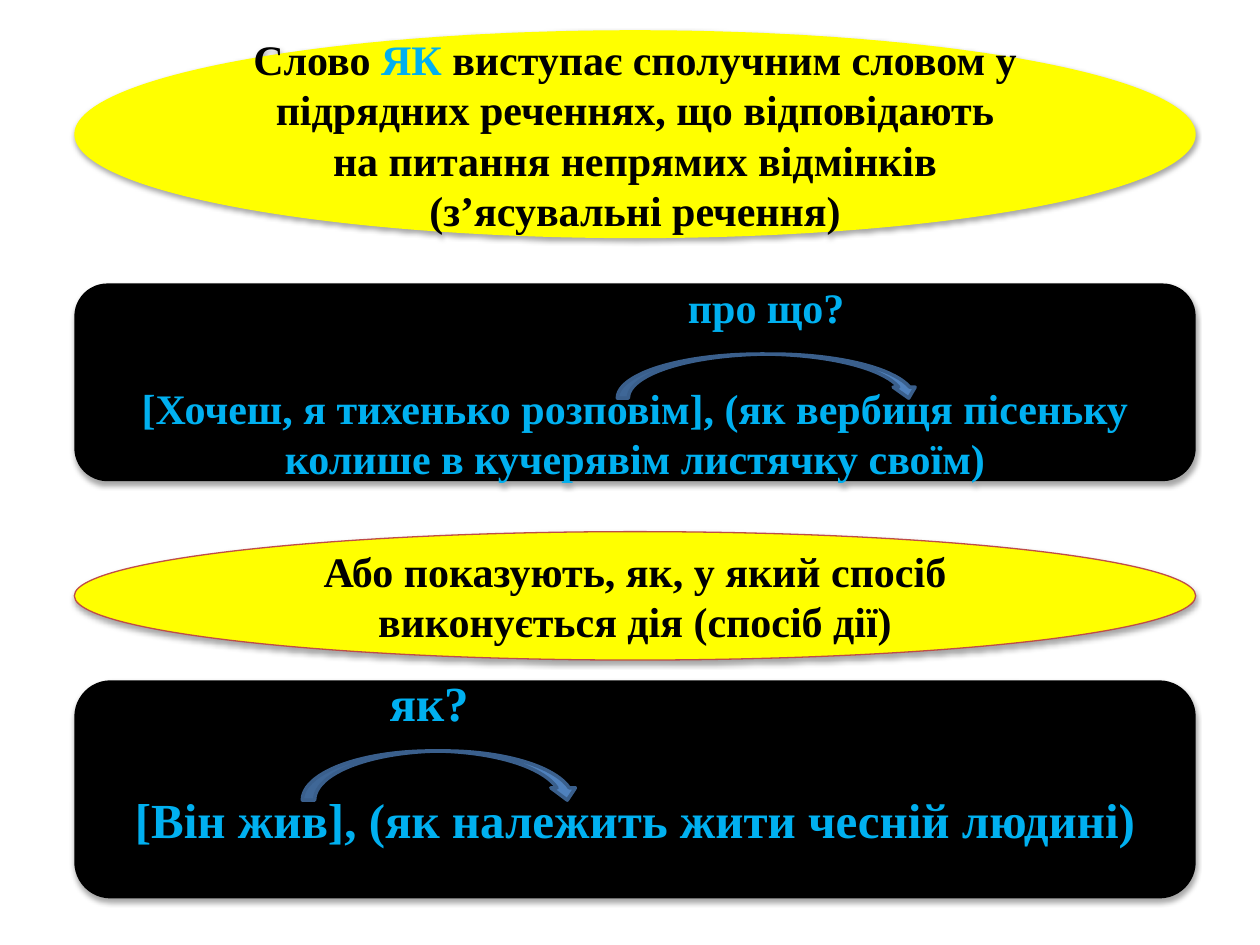
from lxml.etree import SubElement
from pptx import Presentation
from pptx.dml.color import RGBColor
from pptx.enum.shapes import MSO_SHAPE as Shape
from pptx.enum.text import MSO_ANCHOR as Anchor, PP_ALIGN as Align
from pptx.oxml.ns import qn
from pptx.util import Pt

COLORS = {
    "yellow": "FFFF00", "black": "000000", "cyan": "00B0F0",
    "red": "BF4C48", "blue": "4F81BD", "navy": "3A5F8C",
}
FONT = "Times New Roman"
LEFT, WIDTH = 42.5, 640.8

# Each paragraph: spans of (text, colour), alignment, left indent, space before
PANELS = [
    dict(kind=Shape.OVAL, top=17.3, height=118.8, fill="yellow", size=24, paras=[
        ([("Слово ", "black"), ("ЯК", "cyan"),
          (" виступає сполучним словом у підрядних реченнях, що відповідають "
           "на питання непрямих відмінків (з’ясувальні речення)", "black")],
         Align.CENTER, 0, 0)]),
    dict(kind=Shape.ROUNDED_RECTANGLE, top=162, height=113, fill="black", size=24, paras=[
        ([("про що?", "cyan")], Align.CENTER, 150, 0),
        ([("[Хочеш, я тихенько розповім], (як вербиця пісеньку колише "
           "в кучерявім листячку своїм)", "cyan")], Align.CENTER, 0, 28.7)]),
    dict(kind=Shape.OVAL, top=303.8, height=73.4, fill="yellow", size=24, line="red", paras=[
        ([("Або показують, як, у який спосіб виконується дія (спосіб дії)", "black")],
         Align.CENTER, 0, 0)]),
    dict(kind=Shape.ROUNDED_RECTANGLE, top=388.8, height=124.6, fill="black", size=28,
         margins=(0, 33), paras=[
        ([("як?", "cyan")], Align.LEFT, 167, 0),
        ([("[Він жив], (як належить жити чесній людині)", "cyan")], Align.CENTER, 0, 33)]),
]
ARROWS = [(352.8, 202.3, 172.8, 25.2), (172.8, 429.1, 158.4, 28.1)]


def color(name):
    return RGBColor.from_string(COLORS[name])


def add_box(page, kind, place, fill, line=None, line_width=0.75):
    box = page.shapes.add_shape(kind, *(Pt(length) for length in place))
    box.shadow.inherit = False
    box.fill.solid()
    box.fill.fore_color.rgb = color(fill)
    if line:
        box.line.color.rgb = color(line)
        box.line.width = Pt(line_width)
    else:
        box.line.fill.background()
    return box


def add_shadow(box):
    effects = box.element.spPr.find(qn("a:effectLst"))
    shadow = SubElement(effects, qn("a:outerShdw"), blurRad=str(Pt(3.15)),
                        dist=str(Pt(1.8)), dir="5400000", rotWithShape="0")
    tint = SubElement(shadow, qn("a:srgbClr"), val=COLORS["black"])
    SubElement(tint, qn("a:alpha"), val="35000")


def write_text(box, paras, size, margins):
    frame = box.text_frame
    frame.word_wrap = True
    frame.vertical_anchor = Anchor.MIDDLE
    frame.margin_top, frame.margin_bottom = (Pt(margin) for margin in margins)
    for index, (spans, align, indent, gap) in enumerate(paras):
        para = frame.add_paragraph() if index else frame.paragraphs[0]
        para.alignment = align
        para.space_before = Pt(gap)
        para._p.get_or_add_pPr().set("marL", str(Pt(indent)))
        for text, tone in spans:
            span = para.add_run()
            span.text = text
            span.font.name = FONT
            span.font.size = Pt(size)
            span.font.bold = True
            span.font.color.rgb = color(tone)


def main():
    deck = Presentation()
    deck.slide_width, deck.slide_height = Pt(720), Pt(540)
    page = deck.slides.add_slide(deck.slide_layouts[6])

    # Rules and example sentences
    for panel in PANELS:
        place = (LEFT, panel["top"], WIDTH, panel["height"])
        box = add_box(page, panel["kind"], place, panel["fill"], panel.get("line"))
        add_shadow(box)
        write_text(box, panel["paras"], panel["size"], panel.get("margins", (3.6, 3.6)))

    # Arrows from the main clause to the subordinate one
    for place in ARROWS:
        add_box(page, Shape.CURVED_DOWN_ARROW, place, "blue", "navy", 2)

    deck.save("out.pptx")


if __name__ == "__main__":
    main()
